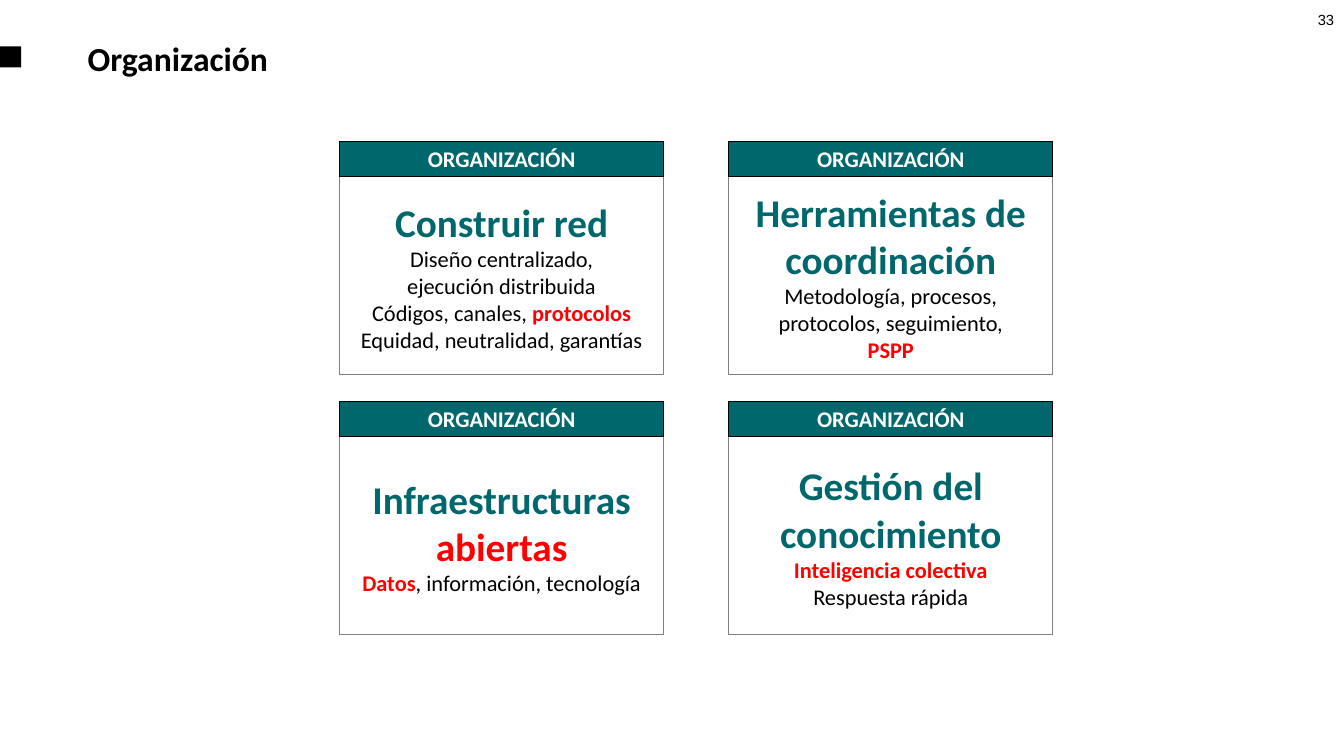
from dataclasses import dataclass

from pptx import Presentation
from pptx.dml.color import RGBColor
from pptx.enum.shapes import MSO_SHAPE
from pptx.enum.text import MSO_ANCHOR, PP_ALIGN
from pptx.util import Inches, Pt


@dataclass(frozen=True)
class Theme:
    font: str = "Calibri"
    number_font: str = "Arial"
    black: RGBColor = RGBColor(0, 0, 0)
    white: RGBColor = RGBColor(255, 255, 255)
    teal: RGBColor = RGBColor(0x00, 0x67, 0x6C)
    red: RGBColor = RGBColor(255, 0, 0)
    gray: RGBColor = RGBColor(0x7F, 0x7F, 0x7F)
    title_size: Pt = Pt(24)
    heading_size: Pt = Pt(28)
    body_size: Pt = Pt(16)
    number_size: Pt = Pt(10.5)


THEME = Theme()

# Each card: heading lines, then detail lines; "*" marks a highlighted span.
CARDS = [
    (["Construir red"],
     [["Diseño centralizado,"], ["ejecución distribuida"],
      ["Códigos, canales, ", "*protocolos", " Equidad, neutralidad, garantías"]]),
    (["Herramientas de coordinación"],
     [["Metodología, procesos, protocolos, seguimiento,"], ["*PSPP"]]),
    (["Infraestructuras ", "*abiertas"],
     [["*Datos", ", información, tecnología"]]),
    (["Gestión del conocimiento"],
     [["*Inteligencia colectiva"], ["Respuesta rápida"]]),
]


def add_block(page, left, top, width, height, fill, line):
    block = page.shapes.add_shape(MSO_SHAPE.RECTANGLE, Inches(left), Inches(top),
                                  Inches(width), Inches(height))
    block.shadow.inherit = False
    block.fill.solid()
    block.fill.fore_color.rgb = fill
    if line is None:
        block.line.fill.background()
    else:
        block.line.color.rgb = line
        block.line.width = Pt(0)
    block.text_frame.word_wrap = True
    block.text_frame.vertical_anchor = MSO_ANCHOR.MIDDLE
    return block


def style_para(para, size, color, bold=False, align=PP_ALIGN.CENTER, font=THEME.font):
    para.alignment = align
    para.font.name = font
    para.font.size = size
    para.font.bold = bold
    para.font.color.rgb = color


def add_label(page, left, top, width, height, text, anchor, **style):
    box = page.shapes.add_textbox(Inches(left), Inches(top), Inches(width), Inches(height))
    box.text_frame.word_wrap = True
    box.text_frame.vertical_anchor = anchor
    para = box.text_frame.paragraphs[0]
    para.text = text
    style_para(para, **style)


def add_spans(para, texts):
    for text in texts:
        span = para.add_run()
        span.text = text.removeprefix("*")
        if text.startswith("*"):
            span.font.bold = True
            span.font.color.rgb = THEME.red


def add_header(page):
    add_block(page, 0, 0.46, 0.21, 0.21, THEME.black, None)
    add_label(page, 12.79, 0.06, 0.54, 0.4, "33", MSO_ANCHOR.TOP, size=THEME.number_size,
              color=THEME.black, align=PP_ALIGN.RIGHT, font=THEME.number_font)
    add_label(page, 0.77, 0.25, 11.81, 0.66, "Organización", MSO_ANCHOR.MIDDLE,
              size=THEME.title_size, color=THEME.black, bold=True, align=PP_ALIGN.LEFT)


def add_card(page, left, top, width, height, heading, details):
    band_height = 0.35
    body = add_block(page, left, top + band_height, width, height - band_height,
                     THEME.white, THEME.gray)
    para = body.text_frame.paragraphs[0]
    add_spans(para, heading)
    style_para(para, THEME.heading_size, THEME.teal, bold=True)
    for detail in details:
        para = body.text_frame.add_paragraph()
        add_spans(para, detail)
        style_para(para, THEME.body_size, THEME.black)

    band = add_block(page, left, top, width, band_height, THEME.teal, THEME.black)
    para = band.text_frame.paragraphs[0]
    para.text = "ORGANIZACIÓN"
    style_para(para, THEME.body_size, THEME.white, bold=True)


def add_card_grid(page, left, top):
    column_step, row_step = 3.86, 2.58
    for index, (heading, details) in enumerate(CARDS):
        row, column = divmod(index, 2)
        add_card(page, left + column * column_step, top + row * row_step,
                 3.21, 2.32, heading, details)


def main():
    deck = Presentation()
    deck.slide_width, deck.slide_height = Inches(13.33), Inches(7.5)
    page = deck.slides.add_slide(deck.slide_layouts[6])
    add_header(page)
    add_card_grid(page, 3.37, 1.4)
    deck.save("out.pptx")


if __name__ == "__main__":
    main()
